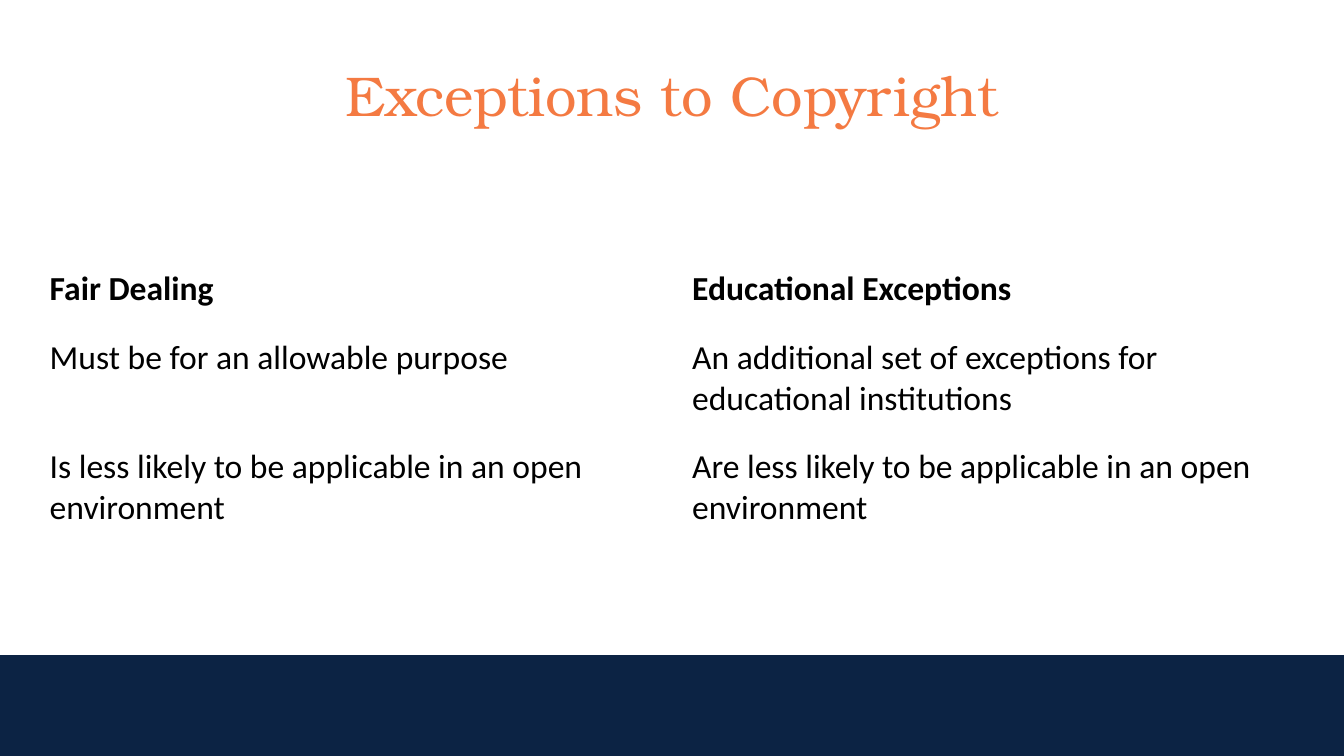
from pptx import Presentation
from pptx.dml.color import RGBColor
from pptx.enum.shapes import MSO_SHAPE as Shape
from pptx.enum.text import MSO_ANCHOR as Anchor, PP_ALIGN as Align
from pptx.util import Inches, Pt

COLORS = {"title": "F47A42", "text": "000000", "band": "0C2344"}
WIDTH = 10
HEIGHT = WIDTH * 9 / 16
BAND_HEIGHT = 0.75

ROWS = [
    ("Fair Dealing", "Educational Exceptions"),
    ("Must be for an allowable purpose",
     "An additional set of exceptions for educational institutions"),
    ("Is less likely to be applicable in an open environment",
     "Are less likely to be applicable in an open environment"),
]


def write_text(frame, text, font="Calibri", size=18, color="text",
               bold=False, align=Align.LEFT):
    frame.word_wrap = True
    para = frame.paragraphs[0]
    para.alignment = align
    span = para.add_run()
    span.text = text
    span.font.name = font
    span.font.size = Pt(size)
    span.font.bold = bold
    span.font.color.rgb = RGBColor.from_string(COLORS[color])


class SlideBuilder:
    """Holds the style and the current slide."""

    title_font = "TeX Gyre Bonum"
    cell_margin = Inches(0.1)

    def __init__(self, page):
        self.page = page

    def band(self, left, top, width, height):
        box = self.page.shapes.add_shape(
            Shape.RECTANGLE, Inches(left), Inches(top), Inches(width), Inches(height))
        box.shadow.inherit = False
        box.fill.solid()
        box.fill.fore_color.rgb = RGBColor.from_string(COLORS["band"])
        box.line.fill.background()

    def title(self, text, left, top, width, height):
        box = self.page.shapes.add_textbox(
            Inches(left), Inches(top), Inches(width), Inches(height))
        frame = box.text_frame
        frame.vertical_anchor = Anchor.MIDDLE
        frame.margin_left = frame.margin_right = Inches(0.07)
        frame.margin_top = frame.margin_bottom = Inches(0.04)
        write_text(frame, text, font=self.title_font, size=30,
                   color="title", align=Align.CENTER)

    def table(self, rows, left, top, column_width, row_heights):
        columns = len(rows[0])
        table = self.page.shapes.add_table(
            len(rows), columns, Inches(left), Inches(top),
            Inches(column_width * columns), Inches(sum(row_heights))).table
        table.horz_banding = False
        for column in table.columns:
            column.width = Inches(column_width)
        for row, height, texts in zip(table.rows, row_heights, rows):
            row.height = Inches(height)
            for cell, text in zip(row.cells, texts):
                cell.fill.background()
                cell.margin_left = cell.margin_right = self.cell_margin
                cell.margin_top = cell.margin_bottom = self.cell_margin
                write_text(cell.text_frame, text, bold=texts is rows[0])


def main():
    deck = Presentation()
    deck.slide_width, deck.slide_height = Inches(WIDTH), Inches(HEIGHT)
    builder = SlideBuilder(deck.slides.add_slide(deck.slide_layouts[6]))

    # Footer band
    builder.band(0, HEIGHT - BAND_HEIGHT, WIDTH, BAND_HEIGHT)

    # Heading
    builder.title("Exceptions to Copyright", 0.5, 0.23, 9, 0.94)

    # Comparison of the two kinds of exception
    builder.table(ROWS, 0.27, 1.9, 4.78, [0.51, 0.81, 0.81])

    deck.save("out.pptx")


if __name__ == "__main__":
    main()
